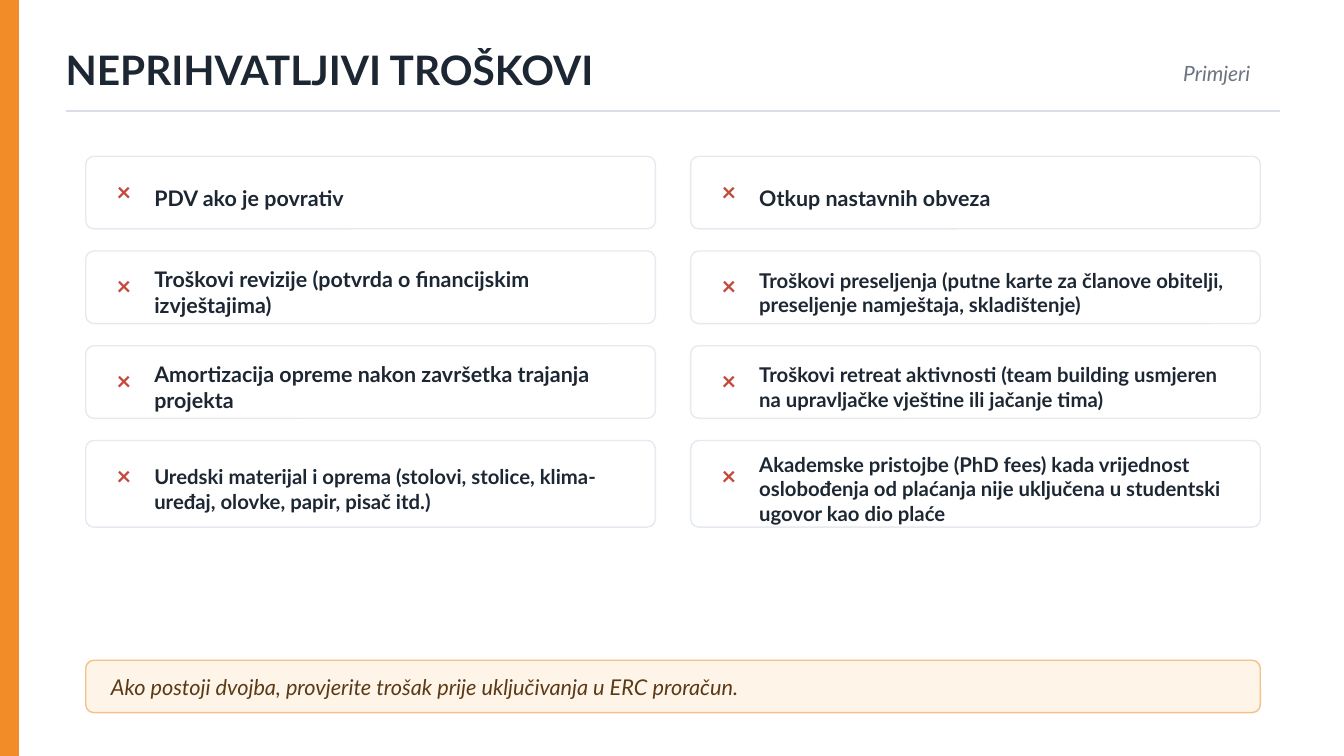
from pptx import Presentation, util as u
from pptx.dml.color import RGBColor
from pptx.enum import shapes, text
from pptx.oxml.ns import qn
from lxml import etree

WHITE = RGBColor(0xFF, 0xFF, 0xFF)
ORANGE = RGBColor(0xF2, 0x8C, 0x28)
INK = RGBColor(0x1D, 0x27, 0x33)
GREY = RGBColor(0x6C, 0x74, 0x80)
RULE = RGBColor(0xD9, 0xDE, 0xE6)
EDGE = RGBColor(0xE5, 0xE9, 0xF0)
RED = RGBColor(0xC5, 0x49, 0x3A)
CREAM = RGBColor(0xFF, 0xF4, 0xE8)
PEACH = RGBColor(0xF5, 0xC0, 0x8A)
BROWN = RGBColor(0x5B, 0x3A, 0x18)

FONT = "Lato"
WIDE, HIGH = 13.33, 7.5
LEFT, TOP = 0.85, 1.55
COL, ROW = 6, 0.94
CARD = 5.65
RADIUS = 0.08
LONG = 60  # characters above which a cost is set smaller

COSTS = [
    ["PDV ako je povrativ",
     "Troškovi revizije (potvrda o financijskim izvještajima)",
     "Amortizacija opreme nakon završetka trajanja projekta",
     "Uredski materijal i oprema (stolovi, stolice, klima-uređaj, olovke, "
     "papir, pisač itd.)"],
    ["Otkup nastavnih obveza",
     "Troškovi preseljenja (putne karte za članove obitelji, preseljenje "
     "namještaja, skladištenje)",
     "Troškovi retreat aktivnosti (team building usmjeren na upravljačke "
     "vještine ili jačanje tima)",
     "Akademske pristojbe (PhD fees) kada vrijednost oslobođenja od plaćanja "
     "nije uključena u studentski ugovor kao dio plaće"],
]


def place(shape, x, y, w, h):
    shape.left, shape.top = u.Inches(x), u.Inches(y)
    shape.width, shape.height = u.Inches(w), u.Inches(h)


def write(shape, words, size, color, bold=False, italic=False,
          align=text.PP_ALIGN.LEFT):
    """Fill a shape with one paragraph, without margins, centred in height."""
    frame = shape.text_frame
    frame.text = words
    frame.word_wrap = True
    frame.auto_size = text.MSO_AUTO_SIZE.NONE
    frame.vertical_anchor = text.MSO_ANCHOR.MIDDLE
    frame.margin_left = frame.margin_right = 0
    frame.margin_top = frame.margin_bottom = 0
    para = frame.paragraphs[0]
    para.alignment = align
    font = para.runs[0].font
    font.name, font.size = FONT, u.Pt(size)
    font.bold, font.italic = bold, italic
    font.color.rgb = color


def label(slide, box, words, size, color, **style):
    shape = slide.shapes.add_textbox(*map(u.Inches, box))
    write(shape, words, size, color, **style)


def panel(slide, box, fill, edge, radius=0):
    kind = shapes.MSO_SHAPE
    shape = slide.shapes.add_shape(
        kind.ROUNDED_RECTANGLE if radius else kind.RECTANGLE,
        *map(u.Inches, box))
    if radius:
        shape.adjustments[0] = radius / min(box[2:])
    shape.shadow.inherit = False
    shape.fill.solid()
    shape.fill.fore_color.rgb = fill
    shape.line.color.rgb = edge
    shape.line.width = u.Pt(1)


def rule(slide, x, y, end):
    line = slide.shapes.add_connector(
        shapes.MSO_CONNECTOR.STRAIGHT, *map(u.Inches, (x, y, end, y)))
    line.line.color.rgb = RULE
    line.line.width = u.Pt(1)
    props = line._element.find(qn("p:spPr"))
    etree.SubElement(props, qn("a:effectLst"))


def card(slide, x, y, h, cost):
    panel(slide, (x, y, CARD, h), WHITE, EDGE, RADIUS)
    label(slide, (x + 0.22, y + 0.17, 0.32, 0.35), "×", 18, RED,
          bold=True, align=text.PP_ALIGN.CENTER)
    label(slide, (x + 0.68, y + 0.13, 4.72, h - 0.16), cost,
          14.5 if len(cost) > LONG else 15.3, INK, bold=True)


def header(slide):
    panel(slide, (0, 0, 0.18, HIGH), ORANGE, ORANGE)
    title = slide.shapes.title
    place(title, 0.65, 0.45, 7.5, 0.48)
    write(title, "NEPRIHVATLJIVI TROŠKOVI", 29, INK, bold=True)
    label(slide, (8.45, 0.55, 3.95, 0.35), "Primjeri", 15, GREY,
          italic=True, align=text.PP_ALIGN.RIGHT)
    rule(slide, 0.65, 1.1, 12.7)


def main():
    deck = Presentation()
    deck.slide_width, deck.slide_height = u.Inches(WIDE), u.Inches(HIGH)
    slide = deck.slides.add_slide(deck.slide_layouts.get_by_name("Title Only"))
    header(slide)
    for col, costs in enumerate(COSTS):
        for row, cost in enumerate(costs):
            high = 0.86 if row == len(costs) - 1 else 0.72
            card(slide, LEFT + col * COL, TOP + row * ROW, high, cost)
    panel(slide, (LEFT, 6.55, COL + CARD, 0.52), CREAM, PEACH, RADIUS)
    label(slide, (LEFT + 0.25, 6.7, COL + CARD - 0.5, 0.22),
          "Ako postoji dvojba, provjerite trošak prije uključivanja u ERC "
          "proračun.", 15.5, BROWN, italic=True)
    deck.save("out.pptx")


if __name__ == "__main__":
    main()
